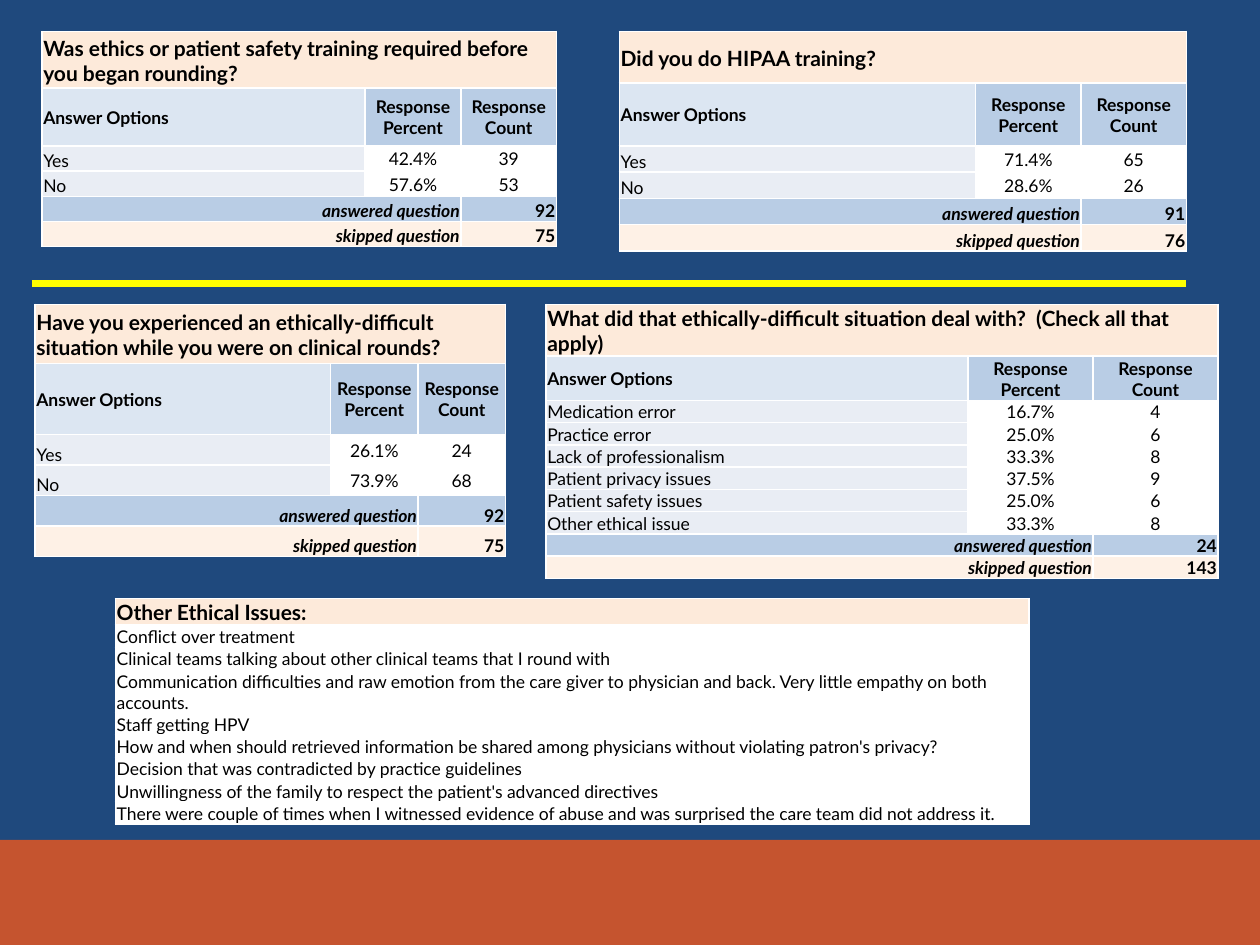
from lxml.etree import SubElement
from pptx import Presentation
from pptx.dml.color import RGBColor
from pptx.enum.shapes import MSO_CONNECTOR, MSO_SHAPE
from pptx.enum.text import MSO_ANCHOR as ANCHOR, PP_ALIGN as ALIGN
from pptx.oxml import parse_xml
from pptx.oxml.ns import nsdecls, qn
from pptx.util import Inches, Pt

U = Inches(1) // 12  # grid unit: the slide is 120 columns by 90 rows
COLUMN_SHARES = (0.628, 0.186, 0.186)
PEACH, CREAM, BLUE, PALE, GREY, WHITE = (
    "FDEADA", "FEF1E6", "B9CDE5", "DCE6F2", "E9EDF4", "FFFFFF")


def rgb(value):
    return RGBColor.from_string(value)


def put(cell, text, fill, align=ALIGN.LEFT, anchor=ANCHOR.MIDDLE,
        size=10, bold=False, italic=False):
    """Write one run into a table cell and give the cell its fill and borders."""
    cell.margin_left = cell.margin_top = cell.margin_right = Inches(0.01)
    cell.margin_bottom = 0
    cell.vertical_anchor = anchor
    for side in ("lnL", "lnR", "lnT", "lnB"):
        cell._tc.get_or_add_tcPr().append(parse_xml(
            f'<a:{side} {nsdecls("a")} w="{Pt(1)}"><a:solidFill>'
            f'<a:srgbClr val="{WHITE}"/></a:solidFill></a:{side}>'))
    cell.fill.solid()
    cell.fill.fore_color.rgb = rgb(fill)
    p = cell.text_frame.paragraphs[0]
    p.alignment = align
    r = p.add_run()
    r.text = text
    r.font.name = "Lato"
    r.font.size = Pt(size)
    r.font.bold = bold
    r.font.italic = italic
    r.font.color.rgb = rgb("000000")


prs = Presentation()
prs.slide_width, prs.slide_height = 120 * U, 90 * U
s = prs.slides.add_slide(prs.slide_layouts[6])
s.background.fill.solid()
s.background.fill.fore_color.rgb = rgb("1F497D")

# Footer band
band = s.shapes.add_shape(MSO_SHAPE.RECTANGLE, 0, 80 * U, 120 * U, 10 * U)
band.shadow.inherit = False
band.line.fill.background()
band.fill.solid()
band.fill.fore_color.rgb = rgb("E35622")
color = band._element.spPr.find(qn("a:solidFill")).find(qn("a:srgbClr"))
SubElement(color, qn("a:alpha")).set("val", "85000")

# Survey questions: title, frame and row heights (title, header, others) in
# grid units, answers, answered count, skipped count
questions = [
    ("Have you experienced an ethically-difficult situation while you were on clinical rounds?",
     (3.35, 29, 44.8, 24), (5.6, 6.8, 2.9),
     [("Yes", "26.1%", "24"), ("No", "73.9%", "68")], "92", "75"),
    ("Was ethics or patient safety training required before you began rounding?",
     (4, 3, 49, 20.4), (5.4, 5.5, 2.4),
     [("Yes", "42.4%", "39"), ("No", "57.6%", "53")], "92", "75"),
    ("Did you do HIPAA training?",
     (59, 3, 54, 21), (4.9, 6, 2.5),
     [("Yes", "71.4%", "65"), ("No", "28.6%", "26")], "91", "76"),
    ("What did that ethically-difficult situation deal with?  (Check all that apply)",
     (52, 29, 64, 26.2), (3.5, 4.2, 1.8),
     [("Medication error", "16.7%", "4"),
      ("Practice error", "25.0%", "6"),
      ("Lack of professionalism", "33.3%", "8"),
      ("Patient privacy issues", "37.5%", "9"),
      ("Patient safety issues", "25.0%", "6"),
      ("Other ethical issue", "33.3%", "8")], "24", "143"),
]
for title, frame, (title_h, header_h, row_h), answers, answered, skipped in questions:
    x, y, w, h = (int(v * U) for v in frame)
    n = len(answers) + 4
    gf = s.shapes.add_table(n, 3, x, y, w, h)
    table = gf.table
    for column, share in zip(table.columns, COLUMN_SHARES):
        column.width = int(w * share)
    for row, height in zip(table.rows, [title_h, header_h] + [row_h] * (n - 2)):
        row.height = int(height * U)
    gf.height = h

    table.cell(0, 0).merge(table.cell(0, 2))
    put(table.cell(0, 0), title, PEACH, size=12, bold=True)
    put(table.cell(1, 0), "Answer Options", PALE, bold=True)
    for c, label in enumerate(("Response Percent", "Response Count"), 1):
        put(table.cell(1, c), label, BLUE, ALIGN.CENTER, bold=True)
    for i, (answer, *values) in enumerate(answers, 2):
        put(table.cell(i, 0), answer, GREY, anchor=ANCHOR.BOTTOM)
        for c, value in enumerate(values, 1):
            put(table.cell(i, c), value, WHITE, ALIGN.CENTER)
    totals = [("answered question", answered, BLUE), ("skipped question", skipped, CREAM)]
    for i, (label, count, fill) in enumerate(totals, n - 2):
        table.cell(i, 0).merge(table.cell(i, 1))
        put(table.cell(i, 0), label, fill, ALIGN.RIGHT, ANCHOR.BOTTOM, bold=True, italic=True)
        put(table.cell(i, 2), count, fill, ALIGN.RIGHT, ANCHOR.BOTTOM, bold=True)

# Free-text answers
issues = [
    "Conflict over treatment",
    "Clinical teams talking about other clinical teams that I round with",
    "Communication difficulties and raw emotion from the care giver to physician and back. "
    "Very little empathy on both accounts.",
    "Staff getting HPV",
    "How and when should retrieved information be shared among physicians "
    "without violating patron's privacy?",
    "Decision that was contradicted by practice guidelines",
    "Unwillingness of the family to respect the patient's advanced directives",
    "There were couple of times when I witnessed evidence of abuse and was surprised "
    "the care team did not address it.",
]
gf = s.shapes.add_table(len(issues) + 1, 1, 11 * U, 57 * U, 87 * U, int(21.5 * U))
for row in gf.table.rows:
    row.height = int(2.1 * U)
gf.height = int(21.5 * U)
put(gf.table.cell(0, 0), "Other Ethical Issues:", PEACH, size=12, bold=True)
for i, issue in enumerate(issues, 1):
    put(gf.table.cell(i, 0), issue, WHITE, anchor=ANCHOR.BOTTOM)

# Divider between the two rows of tables
divider = s.shapes.add_connector(MSO_CONNECTOR.STRAIGHT, 3 * U, 27 * U, 113 * U, 27 * U)
divider.line.color.rgb = rgb("FFFF00")
divider.line.width = Pt(4)
SubElement(divider._element.spPr, qn("a:effectLst"))

prs.save("out.pptx")
